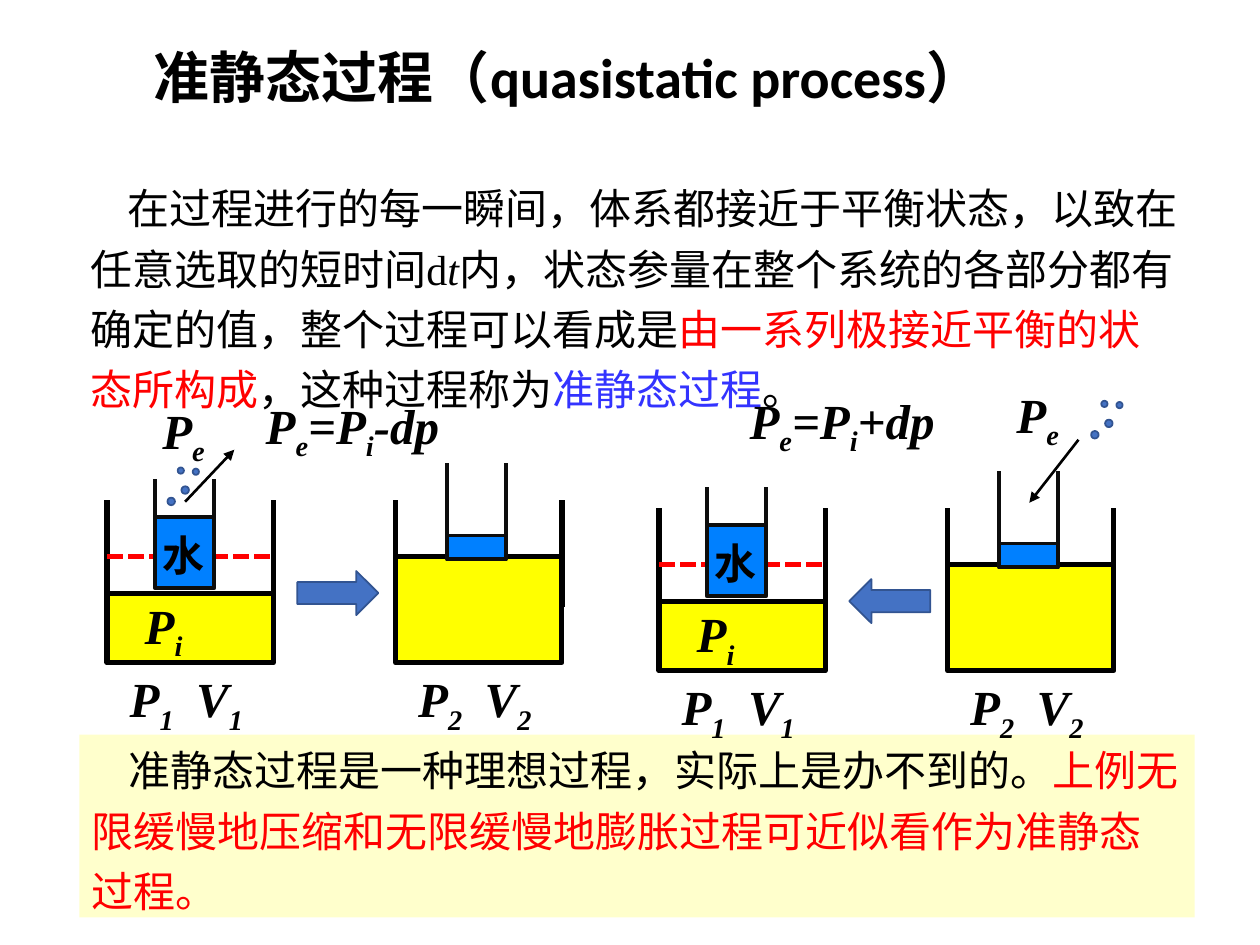
from lxml.etree import SubElement
from pptx import Presentation
from pptx.dml.color import RGBColor
from pptx.enum.dml import MSO_LINE_DASH_STYLE as Dash
from pptx.enum.shapes import MSO_CONNECTOR, MSO_SHAPE
from pptx.enum.text import MSO_ANCHOR, PP_ALIGN
from pptx.oxml.ns import qn
from pptx.util import Pt

BLACK = RGBColor(0x00, 0x00, 0x00)
INK = RGBColor(0x0D, 0x0D, 0x0D)
RED = RGBColor(0xFF, 0x00, 0x00)
VIOLET = RGBColor(0x33, 0x33, 0xFF)
YELLOW = RGBColor(0xFF, 0xFF, 0x00)
CREAM = RGBColor(0xFF, 0xFF, 0xCC)
WATER = RGBColor(0x00, 0x80, 0xFF)
BLUE = RGBColor(0x44, 0x72, 0xC4)
BLUE_EDGE = RGBColor(0x32, 0x54, 0x91)
HAN, SERIF, SANS = "Noto Sans CJK SC", "Times New Roman", "Calibri"

# Content: runs are (text, font, colour, italic)
TITLE = [("准静态过程（", HAN, BLACK, False), ("quasistatic process", SANS, BLACK, False),
         ("）", HAN, BLACK, False)]
DEFINITION = [
    ("在过程进行的每一瞬间，体系都接近于平衡状态，以致在任意选取的短时间", HAN, BLACK, False),
    ("d", SERIF, BLACK, False),
    ("t", SERIF, BLACK, True),
    ("内，状态参量在整个系统的各部分都有确定的值，整个过程可以看成是", HAN, BLACK, False),
    ("由一系列极接近平衡的状态所构成", HAN, RED, False),
    ("，这种过程称为", HAN, BLACK, False),
    ("准静态过程", HAN, VIOLET, False),
    ("。", HAN, BLACK, False),
]
REMARK = [
    ("准静态过程是一种理想过程，实际上是办不到的。", HAN, BLACK, False),
    ("上例无限缓慢地压缩和无限缓慢地膨胀过程可近似看作为准静态过程。", HAN, RED, False),
]
# Label parts alternate between normal and subscript
PRESSURE_OUT = ["P", "e"]
PRESSURE_IN = ["P", "i"]
STATES = [["P", "1", "\tV", "1"], ["P", "2", "\tV", "2"]]

# Each panel: top left of its first vessel, then its own parts in slide positions
PANELS = [
    dict(origin=(61.2, 285.8), equation=["P", "e", "=P", "i", "-dp"],
         equation_at=(144.7, 222.5, 116.6), outside_at=(85.7, 225.4),
         motion=(105.8, 286.7, 133.9, 257), grains_at=(101.5, 267.1), turn=0),
    dict(origin=(376.6, 290.4), equation=["P", "e", "=P", "i", "+dp"],
         equation_at=(421.2, 219.6, 123.1), outside_at=(573.8, 216),
         motion=(616.3, 251.3, 588.2, 287.3), grains_at=(629.3, 229), turn=180),
]
GRAINS = [(0, 0, 3.6), (8.6, 0.7, 3.6), (-5.8, 17.3, 4.3), (2.2, 10.8, 4.3)]

# Vessel geometry
VESSEL_W, VESSEL_H, WALL_H, VESSEL_STEP = 95, 92.9, 60.8, 164.9
PISTON_X, PISTON_W = 27.4, 33.8
LABEL_H = 41
# gas top, water top, water height, rod top, rod bottom
VESSELS = [(53.3, 9.4, 41, -12.2, 15.1), (32.4, 20.2, 13.7, -21.2, 21.6)]


def add_runs(para, runs):
    for text, name, color, italic in runs:
        span = para.add_run()
        span.text = text
        span.font.name = name
        span.font.italic = italic
        span.font.color.rgb = color
        if name == HAN:
            SubElement(span.font._element, qn("a:ea"), typeface=HAN)


def add_block(shape, runs):
    frame = shape.text_frame
    frame.word_wrap = True
    frame.vertical_anchor = MSO_ANCHOR.TOP
    frame.margin_top = frame.margin_bottom = 0
    para = frame.paragraphs[0]
    para._p.get_or_add_pPr().set("indent", str(Pt(21)))
    para.alignment = PP_ALIGN.LEFT
    para.line_spacing = 1.2
    para.font.size = Pt(24)
    add_runs(para, runs)


def add_shape(shapes, kind, x, y, w, h, fill, edge=None, weight=1):
    shape = shapes.add_shape(kind, Pt(x), Pt(y), Pt(w), Pt(h))
    shape.shadow.inherit = False
    shape.fill.solid()
    shape.fill.fore_color.rgb = fill
    if edge is None:
        shape.line.fill.background()
    else:
        shape.line.color.rgb = edge
        shape.line.width = Pt(weight)
    return shape


def add_line(shapes, x1, y1, x2, y2, color, weight):
    line = shapes.add_connector(MSO_CONNECTOR.STRAIGHT, Pt(x1), Pt(y1), Pt(x2), Pt(y2))
    line.line.color.rgb = color
    line.line.width = Pt(weight)
    SubElement(line._element.spPr, qn("a:effectLst"))
    return line


def add_label(shapes, parts, x, y, w, h=LABEL_H, size=28, name=SERIF, italic=True):
    box = shapes.add_textbox(Pt(x), Pt(y), Pt(w), Pt(h))
    box.text_frame.word_wrap = False
    para = box.text_frame.paragraphs[0]
    if any("\t" in part for part in parts):
        tabs = SubElement(para._p.get_or_add_pPr(), qn("a:tabLst"))
        SubElement(tabs, qn("a:tab"), pos=str(Pt(38)), algn="l")
    para.font.size = Pt(size)
    para.font.bold = True
    add_runs(para, [(part, name, BLACK, italic) for part in parts])
    for span in para.runs[1::2]:
        span.font._element.set("baseline", "-25000")


def draw_panel(page, panel):
    shapes = page.shapes.add_group_shape().shapes
    left, top = panel["origin"]

    # Vessels with gas and walls
    for i, (gas_top, *_) in enumerate(VESSELS):
        x = left + i * VESSEL_STEP
        add_shape(shapes, MSO_SHAPE.RECTANGLE, x, top + gas_top, VESSEL_W,
                  VESSEL_H - gas_top, YELLOW, BLACK, 3)
        for wall in (x, x + VESSEL_W):
            add_line(shapes, wall, top, wall, top + WALL_H, BLACK, 3)
        add_label(shapes, STATES[i], x + 5.8, top + VESSEL_H, 83.5)

    # Level of the second state, and the direction of change
    level = top + VESSELS[1][0]
    add_line(shapes, left, level, left + VESSEL_W, level, RED, 3).line.dash_style = Dash.SQUARE_DOT
    arrow = add_shape(shapes, MSO_SHAPE.RIGHT_ARROW, left + 108.7, top + 40.5, 46.3, 25.2,
                      BLUE, BLUE_EDGE)
    arrow.rotation = panel["turn"]

    # Pistons: water and rods
    for i, (_, water_top, water_h, rod_top, rod_end) in enumerate(VESSELS):
        x = left + i * VESSEL_STEP + PISTON_X + 2 * i
        add_shape(shapes, MSO_SHAPE.RECTANGLE, x, top + water_top, PISTON_W, water_h,
                  WATER, INK, 2.25)
        for rod in (x, x + PISTON_W):
            add_line(shapes, rod, top + rod_end, rod, top + rod_top, INK, 2.25)

    # Labels
    add_label(shapes, ["水"], left + 24.5, top + 13, 38.9, 36, 24, HAN, False)
    add_label(shapes, PRESSURE_IN, left + 14.4, top + 51.1, 36.7)
    add_label(shapes, PRESSURE_OUT, *panel["outside_at"], 40.3)
    add_label(shapes, panel["equation"], *panel["equation_at"])

    # Grains moved off or onto the piston
    motion = add_line(shapes, *panel["motion"], BLACK, 1.5)
    SubElement(motion.line._get_or_add_ln(), qn("a:tailEnd"), type="triangle")
    grain_x, grain_y = panel["grains_at"]
    for dx, dy, size in GRAINS:
        add_shape(shapes, MSO_SHAPE.OVAL, grain_x + dx, grain_y + dy, size, size, BLUE, BLUE_EDGE)


def main():
    deck = Presentation()
    deck.slide_width, deck.slide_height = Pt(720), Pt(540)
    page = deck.slides.add_slide(deck.slide_layouts[5])

    # Title
    title = page.shapes.title
    title.left, title.top, title.width, title.height = Pt(80.6), Pt(18), Pt(539.3), Pt(55.4)
    title.text_frame.vertical_anchor = MSO_ANCHOR.MIDDLE
    para = title.text_frame.paragraphs[0]
    para.alignment = PP_ALIGN.LEFT
    para.line_spacing = 0.9
    para.font.size = Pt(32)
    para.font.bold = True
    add_runs(para, TITLE)

    # Definition and remark
    add_block(page.shapes.add_textbox(Pt(44.6), Pt(98.6), Pt(637.2), Pt(139.7)), DEFINITION)
    add_block(add_shape(page.shapes, MSO_SHAPE.RECTANGLE, 45.4, 419.8, 637.2, 104.4, CREAM), REMARK)

    # Compression and expansion
    for panel in PANELS:
        draw_panel(page, panel)
    deck.save("out.pptx")


if __name__ == "__main__":
    main()
